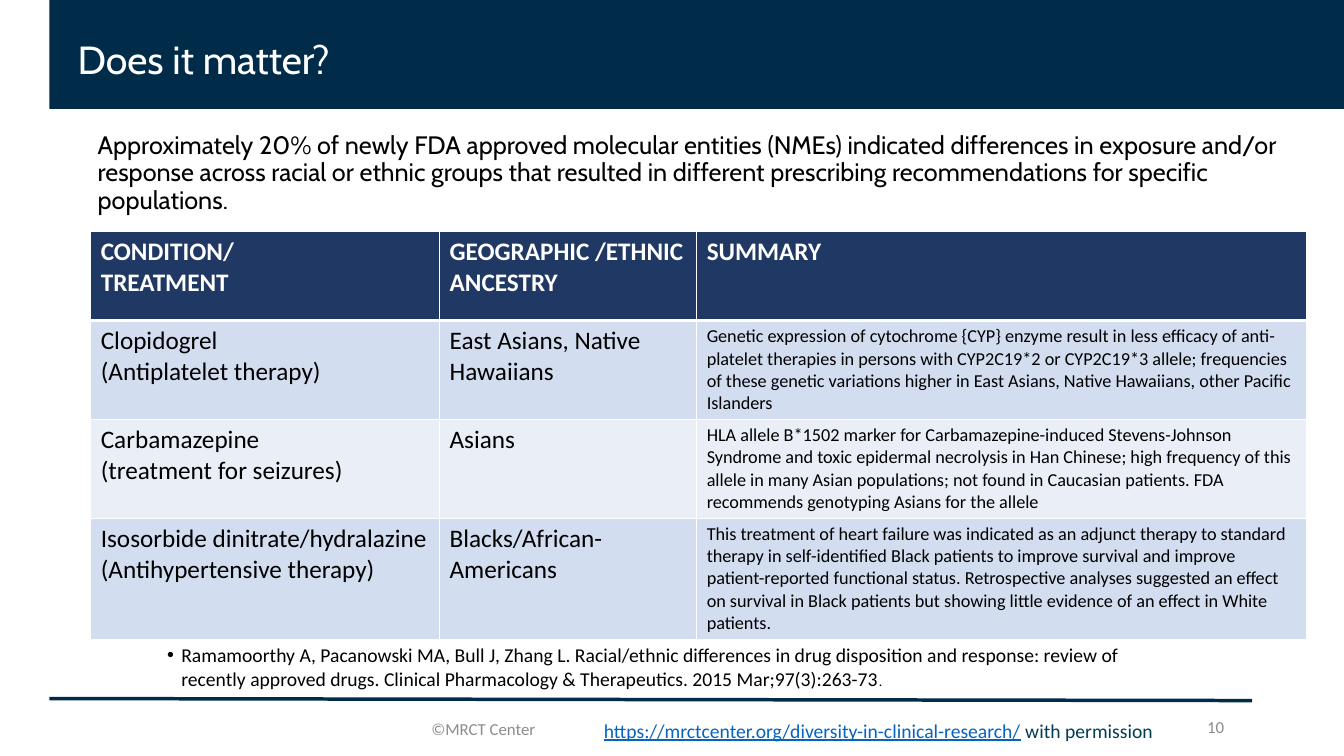
"""Build the slide on racial and ethnic differences in drug response."""
from dataclasses import dataclass

from lxml.etree import SubElement
from pptx import Presentation
from pptx.dml.color import RGBColor
from pptx.enum.shapes import MSO_CONNECTOR, MSO_SHAPE
from pptx.enum.text import MSO_ANCHOR, MSO_AUTO_SIZE, PP_ALIGN
from pptx.oxml import parse_xml
from pptx.oxml.ns import nsdecls, qn
from pptx.slide import Slide
from pptx.table import _Cell
from pptx.text.text import TextFrame, _Run
from pptx.util import Inches, Pt

NAVY = RGBColor(0x01, 0x2C, 0x49)
TEAL = RGBColor(0x00, 0x3D, 0x54)
LINK_BLUE = RGBColor(0x05, 0x63, 0xC1)
HEADER_BLUE = RGBColor(0x20, 0x38, 0x64)
BAND_DARK = RGBColor(0xD2, 0xDE, 0xEF)
BAND_LIGHT = RGBColor(0xEA, 0xEF, 0xF7)
GRAY = RGBColor(0x8C, 0x8C, 0x8C)
BLACK = RGBColor(0, 0, 0)
WHITE = RGBColor(0xFF, 0xFF, 0xFF)


@dataclass(frozen=True)
class Style:
    size: float
    color: RGBColor = BLACK
    font: str = "Calibri"
    bold: bool = False
    underline: bool = False


@dataclass(frozen=True)
class Span:
    text: str
    style: Style


@dataclass(frozen=True)
class TextBox:
    left: float
    top: float
    width: float
    height: float
    spans: tuple[Span, ...]
    anchor: MSO_ANCHOR = MSO_ANCHOR.TOP
    align: PP_ALIGN = PP_ALIGN.LEFT
    line_spacing: float = 1.0
    bullet: bool = False


TITLE = TextBox(0.67, -0.11, 11.52, 1.45,
                (Span("Does it matter?", Style(28, WHITE, "Cabin")),),
                MSO_ANCHOR.MIDDLE, line_spacing=0.9)
FOOTER = Style(12, GRAY)
TEXT_BOXES = (
    TextBox(0.87, 1.27, 12.11, 1.13, (Span(
        "Approximately 20% of newly FDA approved molecular entities (NMEs) indicated "
        "differences in exposure and/or response across racial or ethnic groups that resulted "
        "in different prescribing recommendations for specific populations.",
        Style(18, font="Cabin")),), line_spacing=0.9),
    TextBox(1.56, 6.33, 10.21, 0.75, (
        Span("Ramamoorthy A, Pacanowski MA, Bull J, Zhang L. Racial/ethnic differences in drug "
             "disposition and response: review of recently approved drugs. Clinical Pharmacology "
             "& Therapeutics. 2015 Mar;97(3):263-73", Style(14)),
        Span(".", Style(10))), bullet=True),
    TextBox(4.18, 7.03, 1.4, 0.4, (Span("©MRCT Center", FOOTER),), MSO_ANCHOR.MIDDLE),
    TextBox(5.89, 7.08, 5.82, 0.34, (
        Span("https://mrctcenter.org/diversity-in-clinical-research/",
             Style(14, LINK_BLUE, underline=True)),
        Span(" with permission", Style(14, TEAL)))),
    TextBox(10.37, 7.01, 1.87, 0.4, (Span("10", FOOTER),),
            MSO_ANCHOR.MIDDLE, PP_ALIGN.RIGHT),
)

COLUMN_WIDTHS = (3.46, 2.55, 6.05)
ROW_HEIGHTS = (0.88, 0.97, 0.97, 1.17)
TABLE_ROWS = (
    ("CONDITION/\nTREATMENT", "GEOGRAPHIC /ETHNIC\nANCESTRY", "SUMMARY"),
    ("Clopidogrel\n(Antiplatelet therapy)", "East Asians, Native Hawaiians",
     "Genetic expression of cytochrome {CYP} enzyme result in less efficacy of anti-platelet "
     "therapies in persons with CYP2C19*2 or CYP2C19*3 allele; frequencies of these genetic "
     "variations higher in East Asians, Native Hawaiians, other Pacific Islanders"),
    ("Carbamazepine\n(treatment for seizures)", "Asians",
     "HLA allele B*1502 marker for Carbamazepine-induced Stevens-Johnson Syndrome and toxic "
     "epidermal necrolysis in Han Chinese; high frequency of this allele in many Asian "
     "populations; not found in Caucasian patients. FDA recommends genotyping Asians for "
     "the allele"),
    ("Isosorbide dinitrate/hydralazine\n(Antihypertensive therapy)", "Blacks/African-Americans",
     "This treatment of heart failure was indicated as an adjunct therapy to standard therapy "
     "in self-identified Black patients to improve survival and improve patient-reported "
     "functional status. Retrospective analyses suggested an effect on survival in Black "
     "patients but showing little evidence of an effect in White patients."),
)


def format_run(run: _Run, style: Style) -> None:
    run.font.name = style.font
    run.font.size = Pt(style.size)
    run.font.bold = style.bold
    run.font.underline = style.underline
    run.font.color.rgb = style.color


def fill_text(text_frame: TextFrame, box: TextBox) -> None:
    text_frame.word_wrap = True
    text_frame.auto_size = MSO_AUTO_SIZE.NONE
    text_frame.vertical_anchor = box.anchor
    paragraph = text_frame.paragraphs[0]
    paragraph.alignment = box.align
    paragraph.line_spacing = box.line_spacing
    if box.bullet:
        properties = paragraph._p.get_or_add_pPr()
        properties.set("marL", str(Inches(0.14)))
        properties.set("indent", str(-Inches(0.14)))
        SubElement(properties, qn("a:buFont")).set("typeface", "Arial")
        SubElement(properties, qn("a:buChar")).set("char", "•")
    for span in box.spans:
        run = paragraph.add_run()
        run.text = span.text
        format_run(run, span.style)


def add_text_box(slide: Slide, box: TextBox) -> None:
    shape = slide.shapes.add_textbox(Inches(box.left), Inches(box.top),
                                     Inches(box.width), Inches(box.height))
    fill_text(shape.text_frame, box)


def add_frame(slide: Slide) -> None:
    band = slide.shapes.add_shape(MSO_SHAPE.RECTANGLE, Inches(0.49), 0,
                                  Inches(12.84), Inches(1.08))
    band.shadow.inherit = False
    band.fill.solid()
    band.fill.fore_color.rgb = NAVY
    band.line.fill.background()
    slide.shapes._spTree.insert(2, band._element)
    rule = slide.shapes.add_connector(MSO_CONNECTOR.STRAIGHT, Inches(0.49), Inches(6.93),
                                      Inches(12.42), Inches(6.95))
    rule.line.color.rgb = NAVY
    rule.line.width = Pt(2.5)
    SubElement(rule._element.spPr, qn("a:effectLst"))


def add_title(slide: Slide) -> None:
    title = slide.shapes.title
    title.left, title.top = Inches(TITLE.left), Inches(TITLE.top)
    title.width, title.height = Inches(TITLE.width), Inches(TITLE.height)
    fill_text(title.text_frame, TITLE)


def set_borders(cell: _Cell, top: float, bottom: float) -> None:
    properties = cell._tc.get_or_add_tcPr()
    widths = {"lnL": 1, "lnR": 1, "lnT": top, "lnB": bottom}
    for position, (tag, width) in enumerate(widths.items()):
        properties.insert(position, parse_xml(
            f'<a:{tag} {nsdecls("a")} w="{Pt(width)}"><a:solidFill>'
            f'<a:srgbClr val="{WHITE}"/></a:solidFill></a:{tag}>'))


def add_drug_table(slide: Slide) -> None:
    table = slide.shapes.add_table(len(ROW_HEIGHTS), len(COLUMN_WIDTHS), Inches(0.9),
                                   Inches(2.3), Inches(sum(COLUMN_WIDTHS)),
                                   Inches(sum(ROW_HEIGHTS))).table
    for column, width in zip(table.columns, COLUMN_WIDTHS):
        column.width = Inches(width)
    for row_index, texts in enumerate(TABLE_ROWS):
        table.rows[row_index].height = Inches(ROW_HEIGHTS[row_index])
        is_header = row_index == 0
        band = HEADER_BLUE if is_header else BAND_DARK if row_index % 2 else BAND_LIGHT
        for column_index, text in enumerate(texts):
            cell = table.cell(row_index, column_index)
            cell.fill.solid()
            cell.fill.fore_color.rgb = band
            set_borders(cell, 3 if row_index == 1 else 1, 3 if is_header else 1)
            is_summary = column_index == 2 and not is_header
            style = Style(13 if is_summary else 18, WHITE if is_header else BLACK,
                          bold=is_header)
            paragraph = cell.text_frame.paragraphs[0]
            paragraph.text = text
            for run in paragraph.runs:
                format_run(run, style)


def main() -> None:
    presentation = Presentation()
    presentation.slide_width = Inches(13.33)
    presentation.slide_height = Inches(7.5)
    slide = presentation.slides.add_slide(presentation.slide_layouts[5])
    add_frame(slide)
    add_title(slide)
    add_drug_table(slide)
    for box in TEXT_BOXES:
        add_text_box(slide, box)
    presentation.save("out.pptx")


if __name__ == "__main__":
    main()
